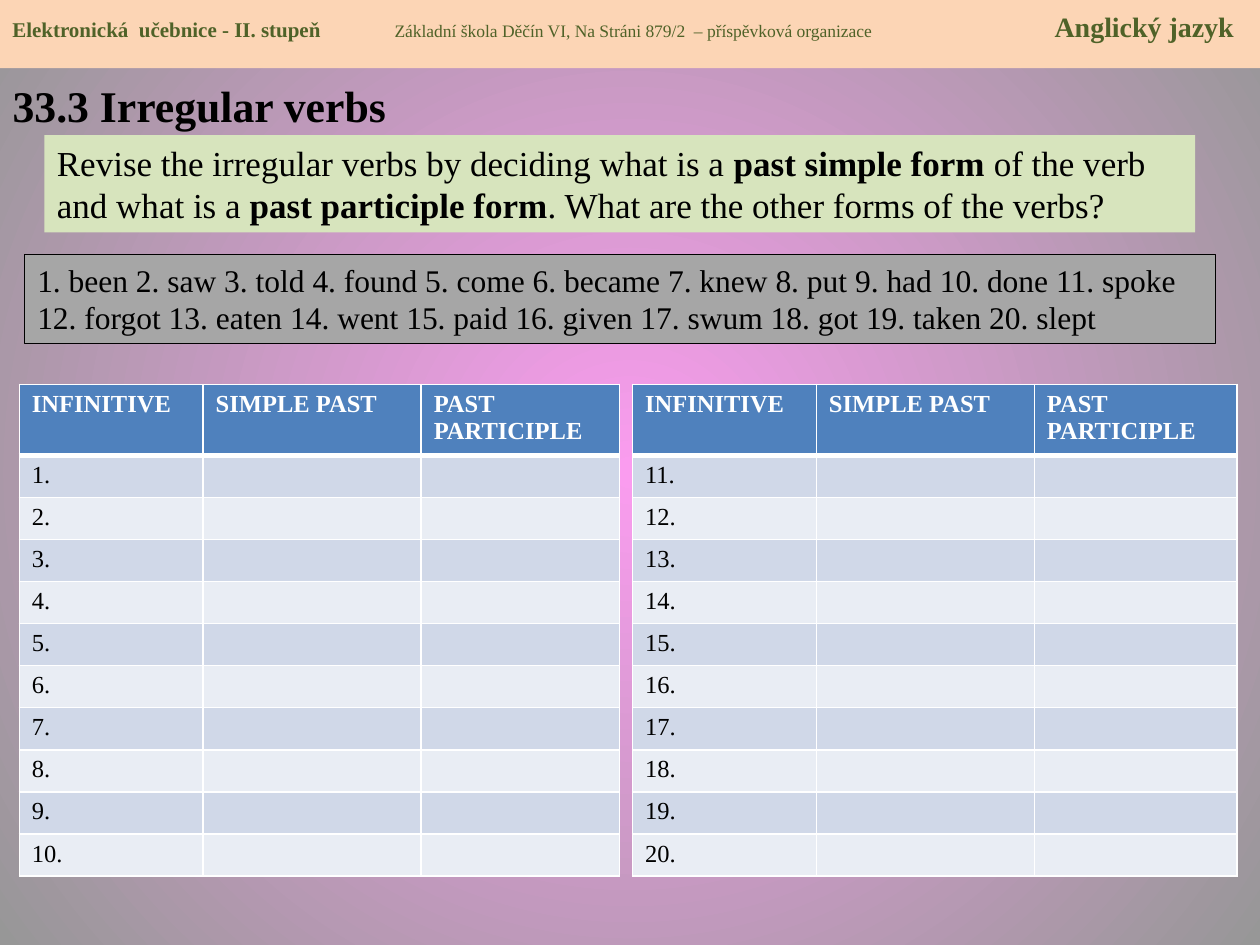
from dataclasses import dataclass
from typing import Optional

from lxml import etree
from pptx import Presentation
from pptx import util as u
from pptx.dml.color import RGBColor
from pptx.enum import shapes, text
from pptx.oxml import ns

Pt = u.Pt
FONT = "Times New Roman"
BLACK = RGBColor(0, 0, 0)
WHITE = RGBColor(255, 255, 255)
PINK = RGBColor(0xFA, 0x9C, 0xEF)
GREY = RGBColor(0x97, 0x97, 0x97)
PEACH = RGBColor(0xFC, 0xD5, 0xB5)
OLIVE = RGBColor(0x4F, 0x62, 0x28)
LIME = RGBColor(0xD7, 0xE4, 0xBD)
SILVER = RGBColor(0xA6, 0xA6, 0xA6)
BLUE = RGBColor(0x4F, 0x81, 0xBD)
BANDS = (RGBColor(0xD0, 0xD8, 0xE8), RGBColor(0xE9, 0xED, 0xF4))
HEADS = ("INFINITIVE", "SIMPLE PAST", "PAST PARTICIPLE")
VERBS = ("been saw told found come became knew put had done spoke forgot eaten "
         "went paid given swum got taken slept").split()


@dataclass
class Span:
    words: str
    size: float
    bold: bool = False


@dataclass
class Panel:
    left: float
    top: float
    width: float
    height: float
    fill: RGBColor
    ink: RGBColor
    spans: list[Span]
    line: Optional[RGBColor] = None
    inset: float = 3.6
    tabs: tuple = ()


@dataclass
class Grid:
    left: float
    first: int
    last: float


def add(parent, tag: str, **attrs):
    return etree.SubElement(parent, ns.qn(tag), **attrs)


def style(font, size: float, ink: RGBColor, bold: bool) -> None:
    font.name = FONT
    font.size = Pt(size)
    font.bold = bold
    font.color.rgb = ink


def draw_panel(slide, panel: Panel) -> None:
    box = slide.shapes.add_shape(
        shapes.MSO_SHAPE.RECTANGLE, Pt(panel.left), Pt(panel.top),
        Pt(panel.width), Pt(panel.height))
    box.shadow.inherit = False
    box.fill.solid()
    box.fill.fore_color.rgb = panel.fill
    if panel.line is None:
        box.line.fill.background()
    else:
        box.line.color.rgb = panel.line
        box.line.width = Pt(0.75)
    frame = box.text_frame
    frame.word_wrap = True
    frame.vertical_anchor = text.MSO_ANCHOR.TOP
    frame.margin_top = Pt(panel.inset)
    para = frame.paragraphs[0]
    para.alignment = text.PP_ALIGN.LEFT
    if panel.tabs:
        stops = add(para._p.get_or_add_pPr(), "a:tabLst")
        for spot, side in panel.tabs:
            add(stops, "a:tab", pos=str(Pt(spot)), algn=side)
    for span in panel.spans:
        run = para.add_run()
        run.text = span.words
        style(run.font, span.size, panel.ink, span.bold)


def draw_cell(cell, words: str, row: int) -> None:
    head = row == 0
    para = cell.text_frame.paragraphs[0]
    if words:
        para.text = words
        style(para.runs[0].font, 14, WHITE if head else BLACK, head)
    else:
        end = add(para._p, "a:endParaRPr", sz="1400")
        add(end, "a:latin", typeface=FONT)
    props = cell._tc.get_or_add_tcPr()
    thick = {"a:lnB": 0, "a:lnT": 1}
    for side in ("a:lnL", "a:lnR", "a:lnT", "a:lnB"):
        wide = 3 if thick.get(side) == row else 1
        line = add(props, side, w=str(Pt(wide)))
        add(add(line, "a:solidFill"), "a:srgbClr", val=str(WHITE))
    cell.fill.solid()
    cell.fill.fore_color.rgb = BLUE if head else BANDS[(row - 1) % 2]


def draw_grid(slide, grid: Grid) -> None:
    wide = (105.1, 124.6, grid.last)
    high = [40.6] + [24.04] * 10
    table = slide.shapes.add_table(
        len(high), len(wide), Pt(grid.left), Pt(219.6),
        Pt(sum(wide)), Pt(sum(high))).table
    table.horz_banding = False
    for col, size in zip(table.columns, wide):
        col.width = Pt(size)
    for row, size in enumerate(high):
        table.rows[row].height = Pt(size)
        words = HEADS if row == 0 else (f"{grid.first + row - 1}.", "", "")
        for col, word in enumerate(words):
            draw_cell(table.cell(row, col), word, row)


def draw_title(slide) -> None:
    title = slide.shapes.title
    title.left, title.top, title.width, title.height = Pt(0), Pt(39), Pt(720), Pt(501)
    frame = title.text_frame
    frame.text = "33.3 Irregular verbs"
    frame.auto_size = text.MSO_AUTO_SIZE.NONE
    frame.vertical_anchor = text.MSO_ANCHOR.TOP
    frame.margin_top = Pt(6)
    para = frame.paragraphs[0]
    para.alignment = text.PP_ALIGN.LEFT
    style(para.runs[0].font, 25, BLACK, True)


def draw_back(slide) -> None:
    fill = slide.background.fill
    fill.gradient()
    for stop, tint in zip(fill.gradient_stops, (PINK, GREY)):
        stop.color.rgb = tint
    for stop, spot in zip(fill.gradient_stops, (0, 1)):
        stop.position = spot
    grad = slide.element.find(".//" + ns.qn("a:gradFill"))
    grad.remove(grad.find(ns.qn("a:lin")))
    ring = etree.Element(ns.qn("a:path"), path="circle")
    add(ring, "a:fillToRect", l="50000", t="50000", r="50000", b="50000")
    grad.find(ns.qn("a:gsLst")).addnext(ring)


def main() -> None:
    deck = Presentation()
    deck.slide_width, deck.slide_height = Pt(720), Pt(540)
    slide = deck.slides.add_slide(deck.slide_layouts[5])
    draw_back(slide)
    draw_title(slide)
    listing = " ".join(f"{num}. {verb}" for num, verb in enumerate(VERBS, 1))
    panels = [
        Panel(0, 0, 720, 39, PEACH, OLIVE, [
            Span("Elektronická  učebnice - II. stupeň\t", 12, True),
            Span("Základní škola Děčín VI, Na Stráni 879/2  – příspěvková organizace\t", 10),
            Span("Anglický jazyk", 16, True),
        ], inset=5.3, tabs=((218.4, "l"), (698, "r"))),
        Panel(25.4, 77.2, 657.6, 55.6, LIME, BLACK, [
            Span("Revise the irregular verbs by deciding what is a ", 20),
            Span("past simple form ", 20, True),
            Span("of the verb and what is a ", 20),
            Span("past participle form", 20, True),
            Span(". What are the other forms of the verbs?", 20),
        ]),
        Panel(14.2, 145.4, 680.4, 50.9, SILVER, BLACK, [Span(listing, 18)], BLACK),
    ]
    for panel in panels:
        draw_panel(slide, panel)
    for grid in (Grid(11, 1, 113.3), Grid(361.4, 11, 115.9)):
        draw_grid(slide, grid)
    deck.save("out.pptx")


if __name__ == "__main__":
    main()
